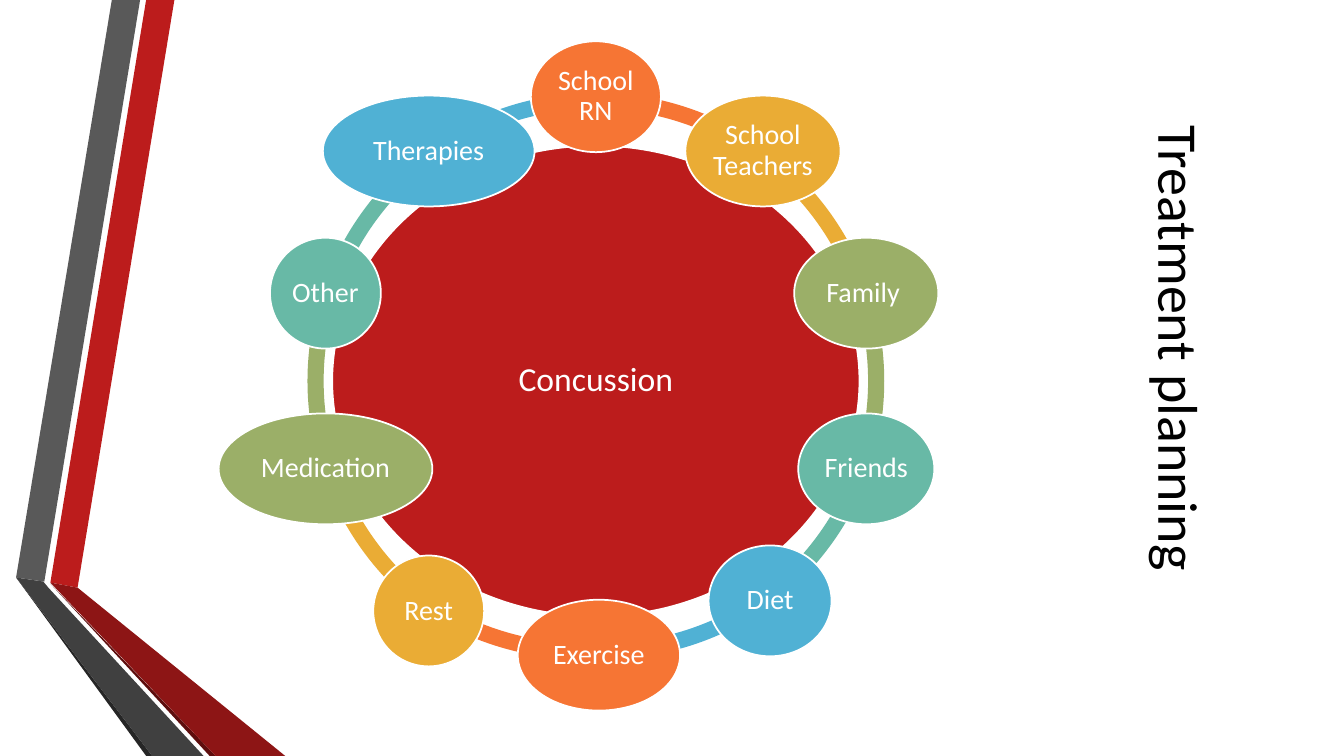
"""Builds the treatment planning slide: a ring of ten helpers around concussion."""
import math
from dataclasses import dataclass

from pptx import Presentation
from pptx import util as u
from pptx.dml import color
from pptx.enum import shapes, text

PX = 9144


@dataclass(frozen=True)
class Theme:
    """Colours and type sizes of the slide."""
    font: str = "Calibri"
    title: int = 40
    core: int = 24
    node: int = 20
    black: str = "000000"
    white: str = "FFFFFF"
    red: str = "BC1C1C"
    deep_red: str = "8D1515"
    dark_red: str = "5E0E0E"
    grey: str = "595959"
    deep_grey: str = "404040"
    dark_grey: str = "262626"
    ring: tuple = ("F67534", "EAAC35", "9BAF68", "68B9A6", "50B1D4")


def write(tf, content, *, theme, size, fill, spacing=1.0, inset=None):
    """Put centred text into a text frame."""
    tf.word_wrap = True
    tf.auto_size = text.MSO_AUTO_SIZE.NONE
    tf.vertical_anchor = text.MSO_ANCHOR.MIDDLE
    if inset is not None:
        tf.margin_left = tf.margin_right = inset * PX
        tf.margin_top = tf.margin_bottom = inset * PX
    p = tf.paragraphs[0]
    p.alignment = text.PP_ALIGN.CENTER
    p.line_spacing = spacing
    r = p.add_run()
    r.text = content
    r.font.name = theme.font
    r.font.size = u.Pt(size)
    r.font.color.rgb = color.RGBColor.from_string(fill)


class Deck:
    """Holds the theme and the current slide."""

    def __init__(self, prs, theme):
        self.theme = theme
        self.s = prs.slides.add_slide(prs.slide_layouts[5])

    def paint(self, sp, fill, line=None):
        """Set fill and outline and drop the shadow."""
        sp.shadow.inherit = False
        sp.fill.solid()
        sp.fill.fore_color.rgb = color.RGBColor.from_string(fill)
        if line:
            sp.line.color.rgb = color.RGBColor.from_string(line)
            sp.line.width = u.Pt(1.25)
        else:
            sp.line.fill.background()

    def title(self, content, x, y, w, h):
        """Place the sideways title."""
        sp = self.s.shapes.title
        sp.left, sp.top, sp.width, sp.height = (v * PX for v in (x, y, w, h))
        sp.rotation = 90
        write(sp.text_frame, content, theme=self.theme,
              size=self.theme.title, fill=self.theme.black)

    def facet(self, points, fill):
        """Draw a closed polygon."""
        fb = self.s.shapes.build_freeform(*points[0], scale=PX)
        fb.add_line_segments(points[1:], close=True)
        self.paint(fb.convert_to_shape(), fill)

    def arc(self, cx, cy, size, start, end, fill):
        """Draw a thin arc clockwise between two angles in degrees."""
        sp = self.s.shapes.add_shape(
            shapes.MSO_SHAPE.BLOCK_ARC, (cx - size // 2) * PX,
            (cy - size // 2) * PX, size * PX, size * PX)
        for i, value in enumerate((start * 0.6, end * 0.6, 0.028)):
            sp.adjustments[i] = value
        self.paint(sp, fill)

    def bubble(self, content, cx, cy, w, h, fill, size):
        """Draw a labelled ellipse around a centre."""
        sp = self.s.shapes.add_shape(
            shapes.MSO_SHAPE.OVAL, round((cx - w / 2) * PX),
            round((cy - h / 2) * PX), w * PX, h * PX)
        self.paint(sp, fill, self.theme.white)
        write(sp.text_frame, content, theme=self.theme, size=size,
              fill=self.theme.white, spacing=0.9, inset=3)


CX, CY, RADIUS, ARC_SIZE, NODE_H = 591, 378, 282, 572, 110

NODES = [
    ("School RN", 129), ("School Teachers", 154), ("Family ", 143),
    ("Friends", 135), ("Diet", 122), ("Exercise", 161), ("Rest", 110),
    ("Medication", 212), ("Other", 110), ("Therapies", 210),
]
NODE_SHIFTS = {4: (7, -10), 5: (3, -10)}
ARC_SHIFTS = {
    3: (2, -6, 19.3, 52.69),
    4: (7, -10, 53.92, 90.85),
    5: (-13, -10, 86.7, 122.67),
}


def main():
    """Build and save the slide."""
    prs = Presentation()
    prs.slide_width, prs.slide_height = u.Inches(13.33), u.Inches(7.5)
    theme = Theme()
    deck = Deck(prs, theme)

    for points, fill in (
        ([(50, 578), (77, 583), (173, 0), (145, 0)], theme.red),
        ([(139, 0), (111, 0), (16, 573), (44, 577)], theme.grey),
        ([(16, 573), (145, 750), (151, 750)], theme.dark_grey),
        ([(50, 579), (208, 750), (214, 750)], theme.dark_red),
        ([(50, 578), (214, 750), (283, 750), (77, 583)], theme.deep_red),
        ([(202, 750), (48, 583), (43, 577), (16, 573), (151, 750)],
         theme.deep_grey),
    ):
        deck.facet(points, fill)

    deck.title("Treatment planning", 906, 280, 530, 131)

    step = 360 / len(NODES)
    for k in reversed(range(len(NODES))):
        start = (270 + step * k) % 360
        regular = (0, 0, start, (start + step) % 360)
        dx, dy, begin, end = ARC_SHIFTS.get(k, regular)
        deck.arc(CX + dx, CY + dy, ARC_SIZE, begin, end, theme.ring[k % 5])

    deck.bubble("Concussion", CX, CY, 523, 467, theme.red, theme.core)
    for k, (label, width) in enumerate(NODES):
        angle = math.radians(step * k)
        dx, dy = NODE_SHIFTS.get(k, (0, 0))
        deck.bubble(label, CX + dx + RADIUS * math.sin(angle),
                    CY + dy - RADIUS * math.cos(angle), width, NODE_H,
                    theme.ring[k % 5], theme.node)

    prs.save("out.pptx")


if __name__ == "__main__":
    main()
